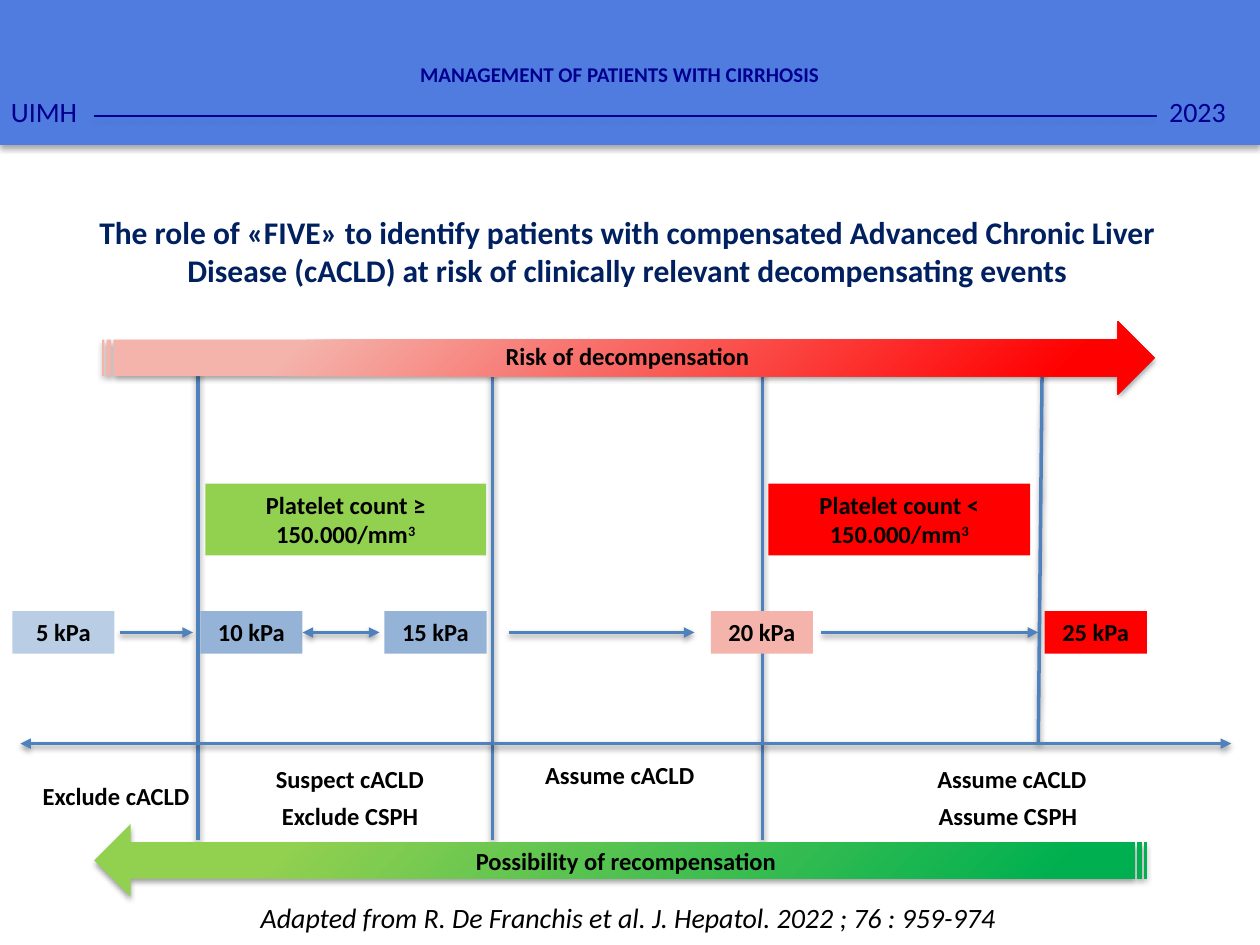
import pptx
import pptx.dml.color
import pptx.enum.shapes
import pptx.enum.text
import pptx.oxml
import pptx.oxml.ns
import pptx.util

Cm, Pt = pptx.util.Cm, pptx.util.Pt
RGB = pptx.dml.color.RGBColor.from_string
qn = pptx.oxml.ns.qn
KIND = pptx.enum.shapes.MSO_SHAPE
ALIGN = pptx.enum.text.PP_ALIGN
ANCHOR = pptx.enum.text.MSO_ANCHOR

HUE = {
    "band": "507CDF", "navy": "000090", "title": "002060", "black": "000000",
    "wire": "4F81BD", "pale": "B9CDE5", "blue": "95B3D7", "pink": "F4B4AC",
    "red": "FF0000", "lime": "92D050", "green": "00B050",
}
NS = 'xmlns:a="http://schemas.openxmlformats.org/drawingml/2006/main"'
SHADE = (f'<a:effectLst {NS}><a:outerShdw blurRad="40000" dist="21000" dir="5400000" '
         'rotWithShape="0"><a:srgbClr val="000000"><a:alpha val="36000"/>'
         '</a:srgbClr></a:outerShdw></a:effectLst>')
RADIAL = f'<a:path {NS} path="circle"><a:fillToRect l="100000" t="100000"/></a:path>'

deck = pptx.Presentation()
deck.slide_width, deck.slide_height = Cm(25.4), Cm(19.05)
slide = deck.slides.add_slide(deck.slide_layouts[5])


def put(text, box, item=None, kind=None, fill=None, shade=False, size=14, hue="black",
        bold=True, italic=False, align=ALIGN.CENTER, anchor=ANCHOR.TOP, power=""):
    """Place text in a placeholder, a filled shape or a plain text box."""
    box = [Cm(n) for n in box]
    if item is not None:
        item.left, item.top, item.width, item.height = box
    elif fill:
        item = slide.shapes.add_shape(kind or KIND.RECTANGLE, *box)
        item.line.fill.background()
        item.shadow.inherit = False
        if isinstance(fill, tuple):
            item.fill.gradient()
            for stop, name, spot in zip(item.fill.gradient_stops, fill, (0.1, 0.81)):
                stop.color.rgb, stop.position = RGB(HUE[name]), spot
            grad = item._element.spPr.find(qn("a:gradFill"))
            grad.replace(grad.find(qn("a:lin")), pptx.oxml.parse_xml(RADIAL))
        else:
            item.fill.solid()
            item.fill.fore_color.rgb = RGB(HUE[fill])
        if shade:
            spot = item._element.spPr
            spot.replace(spot.find(qn("a:effectLst")), pptx.oxml.parse_xml(SHADE))
    else:
        item = slide.shapes.add_textbox(*box)
    if text:
        frame = item.text_frame
        frame.word_wrap, frame.vertical_anchor = True, anchor
        para = frame.paragraphs[0]
        para.alignment = align
        for part in filter(None, (text, power)):
            run = para.add_run()
            run.text = part
            font = run.font
            font.name, font.size, font.bold, font.italic = "Calibri", Pt(size), bold, italic
            font.color.rgb = RGB(HUE[hue])
        if power:
            run.font._element.set("baseline", "30000")
    return item


def wire(x1, y1, x2, y2, hue="wire", width=2, ends=()):
    """Draw a shadowed line; ends lists headEnd and tailEnd arrowheads."""
    link = slide.shapes.add_connector(
        pptx.enum.shapes.MSO_CONNECTOR.STRAIGHT, Cm(x1), Cm(y1), Cm(x2), Cm(y2))
    link.line.color.rgb, link.line.width = RGB(HUE[hue]), Pt(width)
    for end in ends:
        link.line._ln.append(pptx.oxml.parse_xml(f'<a:{end} {NS} type="triangle"/>'))
    link._element.spPr.append(pptx.oxml.parse_xml(SHADE))
    return link


put("The role of «FIVE» to identify patients with compensated Advanced Chronic Liver "
    "Disease (cACLD) at risk of clinically relevant decompensating events",
    (1.55, 4.17, 22.2, 1.8), item=slide.shapes.title, size=18, hue="title")

# Zone borders and axis
for x in (3.99, 9.93, 15.37):
    wire(x, 7.24, x, 16.94)
wire(21.01, 7.24, 20.93, 14.99)
for x in (0.41, 24.82):
    wire(9.93, 14.99, x, 14.99, ends=["tailEnd"])

# Stiffness scale
kpa = {}
for num, x, fill in ((5, 0.25, "pale"), (10, 4.04, "blue"), (15, 7.75, "blue"),
                     (20, 14.33, "pink"), (25, 21.06, "red")):
    kpa[num] = put(f"{num} kPa", (x, 12.32, 2.06, 0.86), fill=fill)
for x1, x2 in ((2.41, 3.89), (10.26, 14), (16.56, 20.93)):
    wire(x1, 12.75, x2, 12.75, ends=["tailEnd"])
span = wire(6.1, 12.75, 7.65, 12.75, ends=["headEnd", "tailEnd"])
span.begin_connect(kpa[10], 3)

for sign, x, wide, fill in (("≥", 4.14, 5.66, "lime"), ("<", 15.49, 5.28, "red")):
    put(f"Platelet count {sign} 150.000/mm", (x, 9.75, wide, 1.45), fill=fill, power="3")

# Verdict for each zone
for text, x, y, wide, align in (
        ("Exclude cACLD", 0.61, 15.62, 3.86, ALIGN.LEFT),
        ("Suspect cACLD", 5.31, 15.27, 3.86, ALIGN.LEFT),
        ("Exclude CSPH", 5.13, 16.03, 3.86, ALIGN.CENTER),
        ("Assume cACLD", 10.74, 15.19, 3.86, ALIGN.LEFT),
        ("Assume cACLD", 16.92, 15.27, 6.96, ALIGN.CENTER),
        ("Assume CSPH", 18.39, 16.03, 3.86, ALIGN.CENTER)):
    put(text, (x, y, wide, 0.86), align=align)

# Risk and recompensation arrows
for text, x, y, fill, left, top in (
        ("Risk of decompensation", 2.06, 6.48, ("red", "pink"), 9.02, 6.76),
        ("Possibility of recompensation", 1.9, 16.61, ("green", "lime"), 8.99, 16.94)):
    arrow = put("", (x, y, 21.21, 1.47), kind=KIND.STRIPED_RIGHT_ARROW, fill=fill, shade=True)
    put(text, (left, top, 7.26, 0.86))
arrow._element.spPr.xfrm.set("flipH", "1")

put("Adapted from R. De Franchis et al. J. Hepatol. 2022 ; 76 : 959-974",
    (3.66, 18.03, 18.01, 0.94), size=16, bold=False, italic=True)

# Header band
put("", (-0.03, -0.03, 25.43, 2.95), fill="band", shade=True)
wire(1.9, 2.34, 23.32, 2.34, hue="navy", width=0.75)
put("MANAGEMENT OF PATIENTS WITH CIRRHOSIS", (1.7, 1.07, 21.59, 0.86), fill="band",
    size=12, hue="navy", anchor=ANCHOR.MIDDLE)
for text, x, wide in (("2023", 23.32, 2.08), ("UIMH", -0.03, 1.85)):
    put(text, (x, 1.78, wide, 0.94), fill="band", size=16, hue="navy", bold=False,
        align=ALIGN.LEFT)

deck.save("out.pptx")
